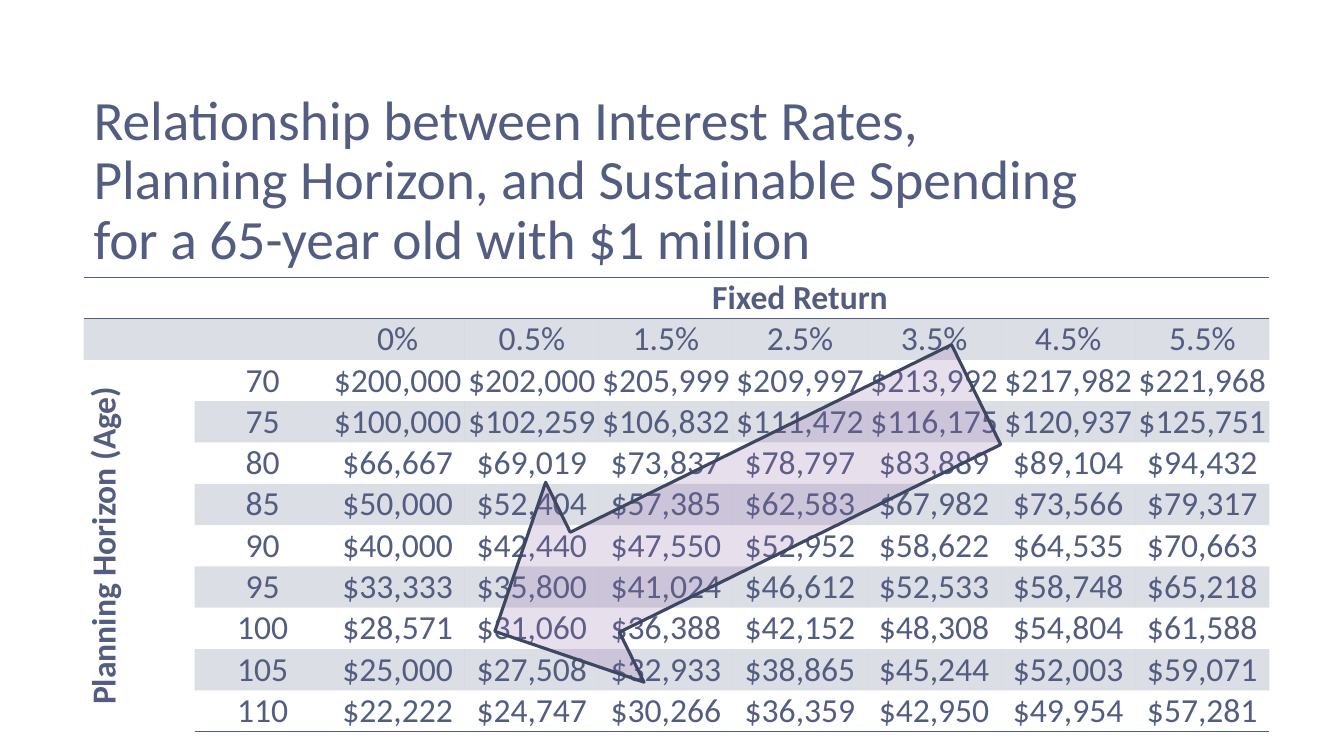
"""Build the slide on interest rates, planning horizon and sustainable spending."""
from typing import Any, NamedTuple

from lxml.etree import SubElement
from pptx import Presentation
from pptx.dml.color import RGBColor
from pptx.enum.shapes import MSO_SHAPE
from pptx.enum.text import MSO_ANCHOR, PP_ALIGN
from pptx.oxml.ns import qn
from pptx.util import Inches, Pt

SLATE = RGBColor(0x53, 0x5D, 0x81)
PURPLE = RGBColor(0x8D, 0x63, 0xA9)
DARK_SLATE = RGBColor(0x3E, 0x46, 0x61)
FONT = "Calibri"
PLAIN_TABLE_STYLE = "{2D5ABB26-0587-4C30-8999-92F81FD0307C}"
COLUMN_WIDTHS = [1.1, 1.35] + [1.33] * 7
ROW_HEIGHT = 0.41
TITLE_LINES = (
    "Relationship between Interest Rates, ",
    "Planning Horizon, and Sustainable Spending",
    "for a 65-year old with $1 million",
)
RETURNS = ("0%", "0.5%", "1.5%", "2.5%", "3.5%", "4.5%", "5.5%")


class Horizon(NamedTuple):
    """Sustainable spending up to one age, by fixed return."""

    age: int
    spending: tuple[int, ...]


HORIZONS = (
    Horizon(70, (200000, 202000, 205999, 209997, 213992, 217982, 221968)),
    Horizon(75, (100000, 102259, 106832, 111472, 116175, 120937, 125751)),
    Horizon(80, (66667, 69019, 73837, 78797, 83889, 89104, 94432)),
    Horizon(85, (50000, 52404, 57385, 62583, 67982, 73566, 79317)),
    Horizon(90, (40000, 42440, 47550, 52952, 58622, 64535, 70663)),
    Horizon(95, (33333, 35800, 41024, 46612, 52533, 58748, 65218)),
    Horizon(100, (28571, 31060, 36388, 42152, 48308, 54804, 61588)),
    Horizon(105, (25000, 27508, 32933, 38865, 45244, 52003, 59071)),
    Horizon(110, (22222, 24747, 30266, 36359, 42950, 49954, 57281)),
)


def add_run(paragraph: Any, text: str, size: float, bold: bool = False) -> None:
    """Add one slate run to the paragraph."""
    run = paragraph.add_run()
    run.text = text
    run.font.name = FONT
    run.font.size = Pt(size)
    run.font.bold = bold
    run.font.color.rgb = SLATE


def fill_translucent(fill: Any, color: RGBColor, properties: Any) -> None:
    """Fill with the color at 20% opacity."""
    fill.solid()
    fill.fore_color.rgb = color
    tint = properties.find(qn("a:solidFill")).find(qn("a:srgbClr"))
    SubElement(tint, qn("a:alpha"), val="20000")


def add_rule(cell: Any, edge: str) -> None:
    """Draw a one-point rule on an edge of the cell."""
    rule = SubElement(cell._tc.get_or_add_tcPr(), qn(f"a:{edge}"), w=str(Pt(1)))
    SubElement(SubElement(rule, qn("a:solidFill")), qn("a:srgbClr"), val=str(SLATE))


def write_cell(cell: Any, text: str, bold: bool = False) -> None:
    """Write centred text in the cell."""
    paragraph = cell.text_frame.paragraphs[0]
    paragraph.alignment = PP_ALIGN.CENTER
    add_run(paragraph, text, 24, bold)


def add_title(slide: Any) -> None:
    """Add the three-line title."""
    frame = slide.shapes.add_textbox(
        Inches(0.83), Inches(1.08), Inches(11.5), Inches(1.45)
    ).text_frame
    frame.word_wrap = True
    frame.vertical_anchor = MSO_ANCHOR.MIDDLE
    paragraph = frame.paragraphs[0]
    paragraph.line_spacing = 0.9
    for index, line in enumerate(TITLE_LINES):
        if index:
            paragraph.add_line_break()
        add_run(paragraph, line, 39.6)


def add_spending_table(slide: Any) -> None:
    """Add the table of spending by age and return."""
    row_count = len(HORIZONS) + 2
    last_row = row_count - 1
    frame = slide.shapes.add_table(
        row_count, len(COLUMN_WIDTHS), Inches(0.83), Inches(2.75),
        Inches(sum(COLUMN_WIDTHS)), Inches(ROW_HEIGHT * row_count),
    )
    table = frame.table
    table.first_row = table.horz_banding = False
    table._tbl.tblPr.find(qn("a:tableStyleId")).text = PLAIN_TABLE_STYLE
    for column, width in zip(table.columns, COLUMN_WIDTHS):
        column.width = Inches(width)
    for row_index, row in enumerate(table.rows):
        row.height = Inches(ROW_HEIGHT)
        for column_index, cell in enumerate(row.cells):
            cell.margin_left = cell.margin_right = 0
            cell.margin_top = cell.margin_bottom = 0
            cell.vertical_anchor = MSO_ANCHOR.BOTTOM
            if row_index == 0:
                add_rule(cell, "lnT")
            if row_index in (0, last_row):
                add_rule(cell, "lnB")
            in_age_label = column_index == 0 and row_index > 1
            if row_index % 2 and not in_age_label:
                fill_translucent(cell.fill, SLATE, cell._tc.tcPr)
            else:
                cell.fill.background()

    return_label = table.cell(0, 2)
    return_label.merge(table.cell(0, len(COLUMN_WIDTHS) - 1))
    write_cell(return_label, "Fixed Return", bold=True)
    age_label = table.cell(2, 0)
    age_label.merge(table.cell(last_row, 0))
    age_label.vertical_anchor = MSO_ANCHOR.MIDDLE
    age_label._tc.tcPr.set("vert", "vert270")
    write_cell(age_label, "Planning Horizon (Age)", bold=True)

    for column_index, rate in enumerate(RETURNS, start=2):
        write_cell(table.cell(1, column_index), rate)
    for row_index, horizon in enumerate(HORIZONS, start=2):
        write_cell(table.cell(row_index, 1), str(horizon.age))
        for column_index, amount in enumerate(horizon.spending, start=2):
            write_cell(table.cell(row_index, column_index), f"${amount:,}")


def add_trend_arrow(slide: Any) -> None:
    """Add the translucent arrow toward lower spending."""
    arrow = slide.shapes.add_shape(
        MSO_SHAPE.DOWN_ARROW, Inches(6.19), Inches(2.43), Inches(2.21), Inches(5.32)
    )
    arrow.rotation = 63.8
    arrow.shadow.inherit = False
    fill_translucent(arrow.fill, PURPLE, arrow._element.spPr)
    arrow.line.color.rgb = DARK_SLATE
    arrow.line.width = Pt(2.25)


def main() -> None:
    """Create and save the presentation."""
    presentation = Presentation()
    presentation.slide_width = Inches(13.33)
    presentation.slide_height = Inches(7.5)
    slide = presentation.slides.add_slide(presentation.slide_layouts[6])
    add_title(slide)
    add_spending_table(slide)
    add_trend_arrow(slide)
    presentation.save("out.pptx")


if __name__ == "__main__":
    main()
